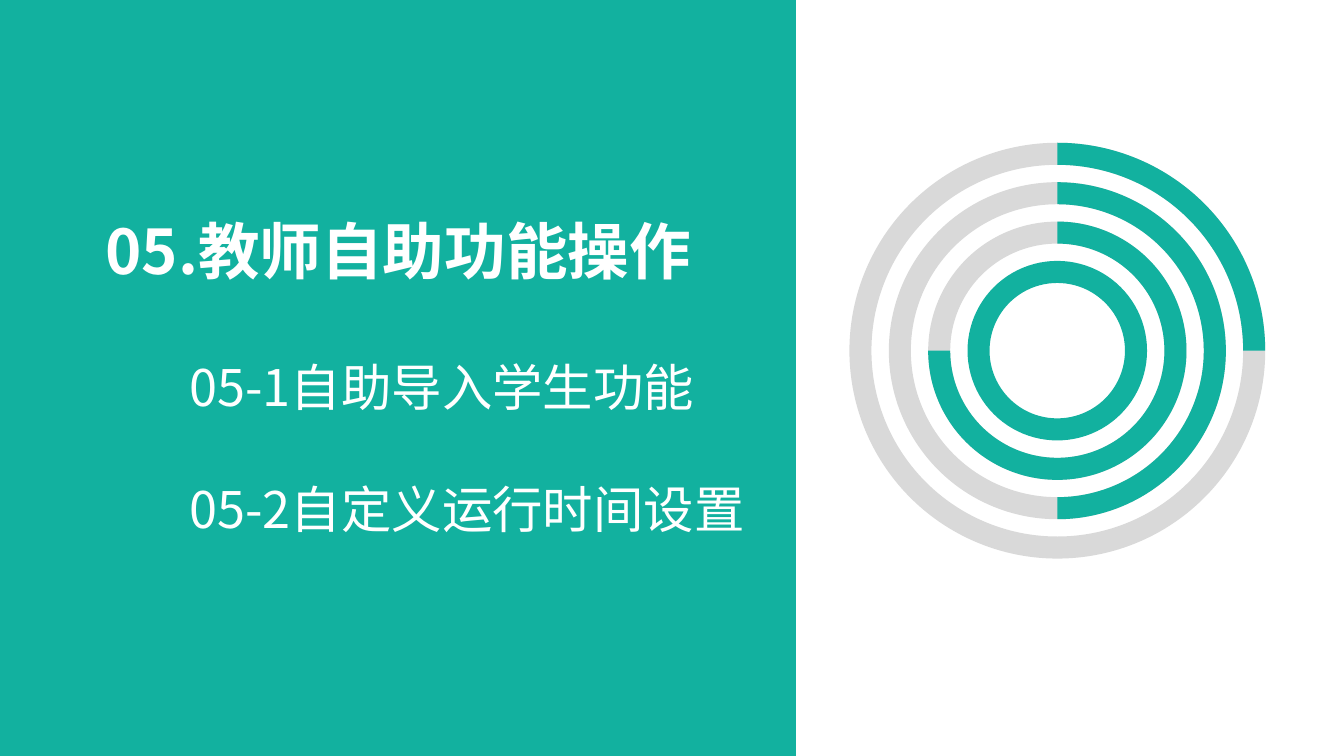
from dataclasses import dataclass

from lxml import etree
from pptx import Presentation
from pptx.dml.color import RGBColor
from pptx.enum.shapes import MSO_SHAPE
from pptx.enum.text import MSO_ANCHOR, MSO_AUTO_SIZE, PP_ALIGN
from pptx.oxml.ns import qn
from pptx.util import Pt

PX = 9525
RECT, DONUT, ARC = MSO_SHAPE.RECTANGLE, MSO_SHAPE.DONUT, MSO_SHAPE.BLOCK_ARC
TOP, NO_FIT = MSO_ANCHOR.TOP, MSO_AUTO_SIZE.NONE
LEFT, CENTER = PP_ALIGN.LEFT, PP_ALIGN.CENTER


@dataclass(frozen=True)
class Theme:
    teal: RGBColor = RGBColor(0x12, 0xB1, 0x9F)
    gray: RGBColor = RGBColor(0xD9, 0xD9, 0xD9)
    white: RGBColor = RGBColor(0xFF, 0xFF, 0xFF)
    font: str = "Noto Sans CJK SC"
    head: int = 44
    item: int = 36
    line: float = 1.21


THEME = Theme()


def emu(*box):
    return [int(n * PX) for n in box]


def add_form(shapes, kind, box, color):
    form = shapes.add_shape(kind, *emu(*box))
    form.shadow.inherit = False
    form.fill.solid()
    form.fill.fore_color.rgb = color
    form.line.fill.background()
    return form


def set_frame(frame):
    frame.word_wrap = True
    frame.auto_size = NO_FIT
    frame.vertical_anchor = TOP


def write(para, text, size, align, bold=False, gap=0):
    para.alignment = align
    para.line_spacing = Pt(size * THEME.line)
    para.space_before = Pt(gap)
    run = para.add_run()
    run.text = text
    font = run.font
    font.size, font.bold, font.name = Pt(size), bold, THEME.font
    font.color.rgb = THEME.white
    latin = run.font._element.find(qn("a:latin"))
    east = etree.Element(qn("a:ea"), typeface=THEME.font)
    latin.addnext(east)


def add_panel(slide, box, head, items):
    x, y, w, h = box
    title = slide.shapes.title
    panel = add_form(slide.shapes, RECT, box, THEME.teal)
    title.element.addprevious(panel.element)

    title.left, title.top, title.width, title.height = emu(x + 53, y + 197, 653, 81)
    set_frame(title.text_frame)
    write(title.text_frame.paragraphs[0], head, THEME.head, CENTER, bold=True)

    frame = slide.shapes.add_textbox(*emu(x + 171, y + 334, 570, 184)).text_frame
    set_frame(frame)
    for i, item in enumerate(items):
        para = frame.add_paragraph() if i else frame.paragraphs[0]
        gap = THEME.item * THEME.line if i else 0
        write(para, item, THEME.item, LEFT, gap=gap)


def add_rings(slide, box, ends, step=75, thick=21):
    x, y, w, h = box
    group = slide.shapes.add_group_shape()
    for i, end in enumerate(ends):
        size = w - i * step
        spot = (x + (w - size) / 2, y + (h - size) / 2, size, size)
        full = end == 270
        ring = add_form(group.shapes, DONUT, spot, THEME.teal if full else THEME.gray)
        ring.adjustments[0] = thick / size
        if not full:
            arc = add_form(group.shapes, ARC, spot, THEME.teal)
            arc.adjustments[0] = 270 * 0.6
            arc.adjustments[1] = end * 0.6
            arc.adjustments[2] = thick / size


def main():
    deck = Presentation()
    deck.slide_width, deck.slide_height = emu(1280, 720)
    slide = deck.slides.add_slide(deck.slide_layouts[5])
    add_panel(
        slide,
        (0, 0, 758, 720),
        "05.教师自助功能操作",
        ["05-1自助导入学生功能", "05-2自定义运行时间设置"],
    )
    add_rings(slide, (809, 136, 396, 396), [0, 90, 180, 270])
    deck.save("out.pptx")


if __name__ == "__main__":
    main()
